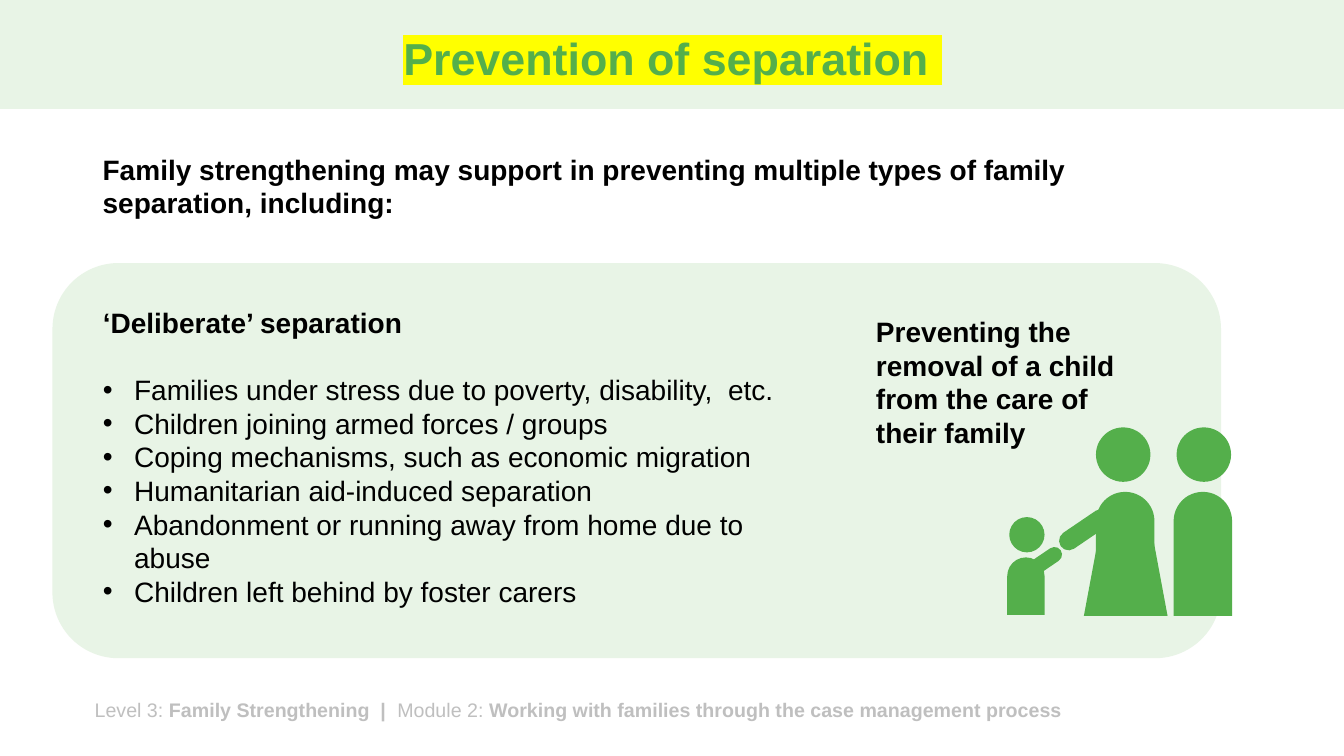
"""Build the slide on prevention of family separation."""
from lxml import etree
from pptx import Presentation
from pptx.dml.color import RGBColor
from pptx.enum.shapes import MSO_SHAPE as SHAPE
from pptx.enum.text import MSO_ANCHOR as ANCHOR, MSO_AUTO_SIZE as FIT, PP_ALIGN as ALIGN
from pptx.oxml.ns import qn
from pptx.util import Inches, Pt

GREEN = RGBColor(0x54, 0xAF, 0x4B)
PALE = RGBColor(0xE8, 0xF4, 0xE6)
GREY = RGBColor(0xBF, 0xBF, 0xBF)
BLACK = RGBColor(0, 0, 0)
YELLOW = RGBColor(0xFF, 0xFF, 0)


def add_figure(shapes, kind, box, color, rotation=0, adjust=()):
    sp = shapes.add_shape(kind, *map(Inches, box))
    sp.shadow.inherit = False
    sp.fill.solid()
    sp.fill.fore_color.rgb = color
    sp.line.fill.background()
    sp.rotation = rotation
    for i, value in enumerate(adjust):
        sp.adjustments[i] = value
    return sp


def add_run(p, text, size, color, bold):
    r = p.add_run()
    r.text = text
    r.font.color.rgb = color
    for name, value in {"name": "Arial", "size": Pt(size), "bold": bold}.items():
        setattr(r.font, name, value)


prs = Presentation()
prs.slide_width, prs.slide_height = Inches(13.33), Inches(7.5)
s = prs.slides.add_slide(prs.slide_layouts[1])
title, body = s.shapes.title, s.placeholders[1]

panel = add_figure(s.shapes, SHAPE.ROUNDED_RECTANGLE, (0.52, 2.61, 11.59, 3.92), PALE)
band = add_figure(s.shapes, SHAPE.RECTANGLE, (0, 0, 13.33, 1.08), PALE)
for sp in (panel, band):
    s.shapes.element.insert(2, sp.element)

for holder, box, anchor in (
    (title, (0.92, 0.13, 11.5, 0.95), ANCHOR.MIDDLE),
    (body, (0.92, 2.98, 7.05, 3.13), ANCHOR.TOP),
):
    holder.left, holder.top, holder.width, holder.height = map(Inches, box)
    frame_format = {"auto_size": FIT.NONE, "word_wrap": True, "vertical_anchor": anchor}
    for name, value in frame_format.items():
        setattr(holder.text_frame, name, value)

p = title.text_frame.paragraphs[0]
p.alignment, p.line_spacing = ALIGN.CENTER, 0.9
add_run(p, "Prevention of separation ", 32, GREEN, True)
highlight = etree.Element(qn("a:highlight"))
etree.SubElement(highlight, qn("a:srgbClr"), val=str(YELLOW))
next(title.element.iter(qn("a:latin"))).addprevious(highlight)

causes = [
    "Families under stress due to poverty, disability,  etc.",
    "Children joining armed forces / groups",
    "Coping mechanisms, such as economic migration",
    "Humanitarian aid-induced separation",
    "Abandonment or running away from home due to abuse",
    "Children left behind by foster carers",
]
tf = body.text_frame
for i, text in enumerate(["‘Deliberate’ separation"] + causes):
    heading = i == 0
    p = tf.paragraphs[0] if heading else tf.add_paragraph()
    spacing = {"space_before": Pt(0), "space_after": Pt(24 if heading else 0), "line_spacing": 1.0}
    for name, value in spacing.items():
        setattr(p, name, value)
    add_run(p, text, 20, BLACK, heading)
    pPr = p._p.get_or_add_pPr()
    indent = 0 if heading else Inches(0.31)
    pPr.set("marL", str(indent))
    pPr.set("indent", str(-indent))
    if heading:
        etree.SubElement(pPr, qn("a:buNone"))
    else:
        etree.SubElement(pPr, qn("a:buFont"), typeface="Arial")
        etree.SubElement(pPr, qn("a:buChar"), char="•")

intro = "Family strengthening may support in preventing multiple types of family separation, including:"
aim = "Preventing the removal of a child from the care of their family"
footer = [
    ("Level 3: ", False),
    ("Family Strengthening  |  ", True),
    ("Module 2: ", False),
    ("Working with families through the case management process", True),
]
for box, size, color, runs in (
    ((0.92, 1.46, 10.47, 0.77), 20, BLACK, [(intro, True)]),
    ((8.59, 3.07, 2.8, 1.45), 20, BLACK, [(aim, True)]),
    ((0.84, 6.87, 10.62, 0.34), 14, GREY, footer),
):
    tf = s.shapes.add_textbox(*map(Inches, box)).text_frame
    tf.word_wrap = True
    for text, bold in runs:
        add_run(tf.paragraphs[0], text, size, color, bold)

family = s.shapes.add_group_shape().shapes
for torso, head in (
    ((11.64, 4.88, 0.58, 1.23), (11.67, 4.24, 0.54, 0.54)),
    ((10.87, 4.88, 0.58, 1.23), (10.87, 4.24, 0.54, 0.54)),
    ((9.99, 5.53, 0.37, 0.57), (10.01, 5.13, 0.35, 0.35)),
):
    add_figure(family, SHAPE.ROUND_2_SAME_RECTANGLE, torso, GREEN, adjust=(0.5, 0))
    add_figure(family, SHAPE.OVAL, head, GREEN)
add_figure(family, SHAPE.FLOWCHART_MANUAL_OPERATION, (10.75, 5.22, 0.83, 0.89), GREEN, 180)
for arm in ((10.47, 5.16, 0.58, 0.19), (10.21, 5.48, 0.34, 0.15)):
    add_figure(family, SHAPE.ROUNDED_RECTANGLE, arm, GREEN, 325.8, (0.5,))

prs.save("out.pptx")
